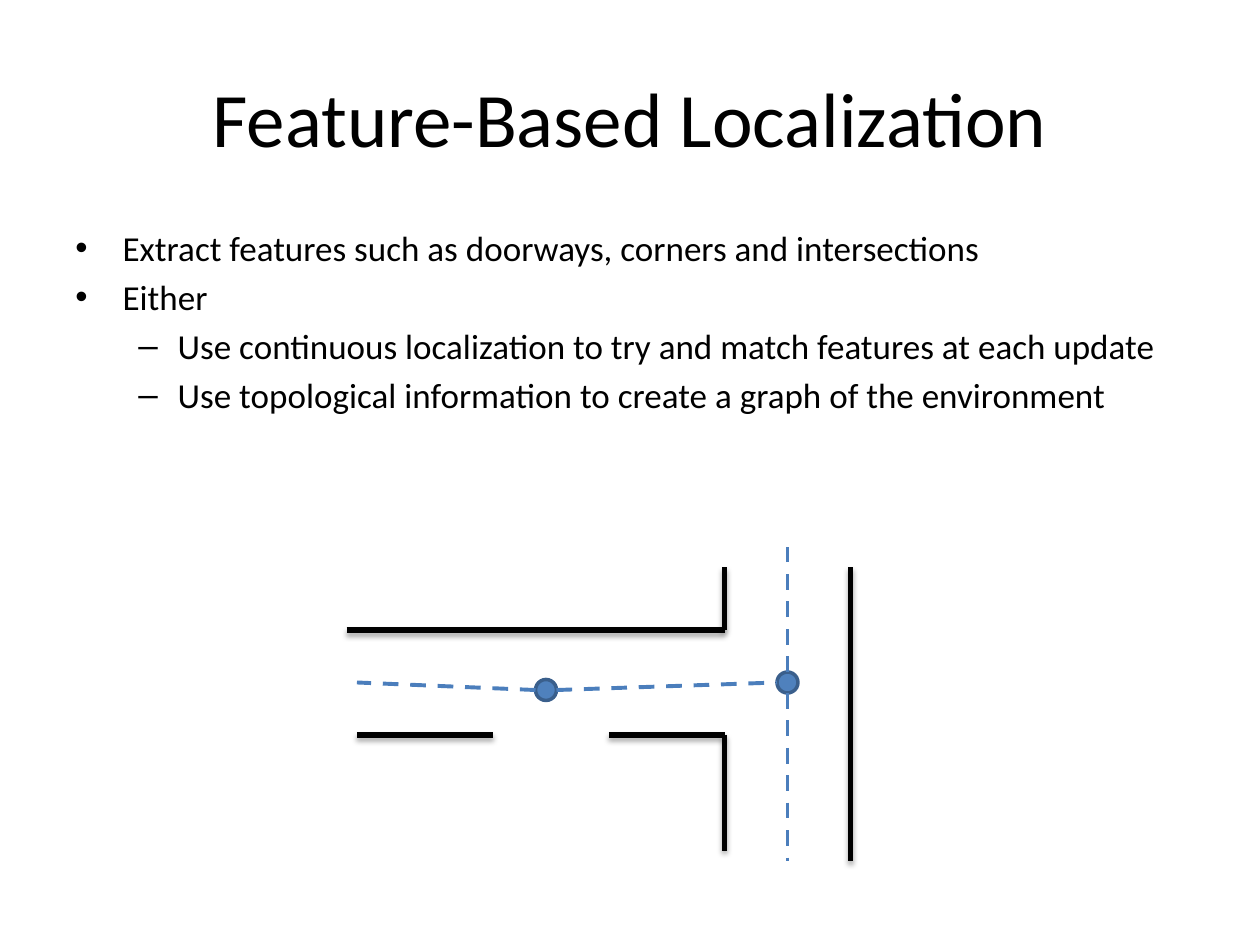
from dataclasses import dataclass

from lxml.etree import SubElement
from pptx import Presentation
from pptx.dml.color import RGBColor
from pptx.enum.dml import MSO_LINE
from pptx.enum.shapes import MSO_CONNECTOR, MSO_SHAPE
from pptx.enum.text import MSO_ANCHOR, PP_ALIGN
from pptx.oxml.ns import qn
from pptx.util import Pt


@dataclass(frozen=True)
class Theme:
    font: str = "Calibri"
    title_size: float = 44
    body_size: float = 20
    ink: RGBColor = RGBColor(0x00, 0x00, 0x00)
    node_fill: RGBColor = RGBColor(0x4F, 0x81, 0xBD)
    node_edge: RGBColor = RGBColor(0x3A, 0x5F, 0x8C)
    route: RGBColor = RGBColor(0x4B, 0x7E, 0xBC)


THEME = Theme()

# Bullet sign, left indent and hanging indent for each level
LEVELS = [("•", 27, -27), ("–", 58.5, -22.5)]

POINTS = [
    (0, "Extract features such as doorways, corners and intersections"),
    (0, "Either"),
    (1, "Use continuous localization to try and match features at each update"),
    (1, "Use topological information to create a graph of the environment"),
]

# Corridor edges, in points
UPPER, LOWER = 360, 420
INNER, OUTER = 414, 486
WALLS = [
    (198, UPPER, INNER, UPPER),
    (204, LOWER, 282, LOWER),
    (348, LOWER, INNER, LOWER),
    (OUTER, 324, OUTER, 492),
    (INNER, UPPER, INNER, 324),
    (INNER, LOWER, INNER, 486),
]

# Graph nodes: the doorway and the intersection
RADIUS = 6
DOOR = (312, 394.3)
CROSSING = ((INNER + OUTER) / 2, 390)


def add_text_box(page, left, top, width, height, text, size):
    box = page.shapes.add_textbox(Pt(left), Pt(top), Pt(width), Pt(height))
    frame = box.text_frame
    frame.word_wrap = True
    frame.text = text
    for para in frame.paragraphs:
        for span in para.runs:
            span.font.name = THEME.font
            span.font.size = Pt(size)
            span.font.color.rgb = THEME.ink
    return frame


def add_title(page, text):
    frame = add_text_box(page, 36, 21.6, 648, 90, text, THEME.title_size)
    frame.vertical_anchor = MSO_ANCHOR.MIDDLE
    frame.paragraphs[0].alignment = PP_ALIGN.CENTER


def add_bullets(page, points):
    text = "\n".join(words for _, words in points)
    frame = add_text_box(page, 36, 126, 648, 356.4, text, THEME.body_size)
    for para, (level, _) in zip(frame.paragraphs, points):
        sign, indent, hanging = LEVELS[level]
        para.level = level
        para.space_before = Pt(THEME.body_size * 0.2)
        properties = para._p.get_or_add_pPr()
        properties.set("marL", str(Pt(indent)))
        properties.set("indent", str(Pt(hanging)))
        SubElement(properties, qn("a:buFont"), typeface="Arial")
        SubElement(properties, qn("a:buChar"), char=sign)


def add_line(page, ends, color, width):
    """Draw a straight line; return it with its empty effect list."""
    line = page.shapes.add_connector(MSO_CONNECTOR.STRAIGHT, *map(Pt, ends))
    line.line.color.rgb = color
    line.line.width = Pt(width)
    effects = SubElement(line._element.spPr, qn("a:effectLst"))
    return line, effects


def add_wall(page, ends):
    _, effects = add_line(page, ends, THEME.ink, 3)
    shadow = SubElement(effects, qn("a:outerShdw"), blurRad=str(Pt(3.1)),
                        dist=str(Pt(1.8)), dir="5400000", rotWithShape="0")
    color = SubElement(shadow, qn("a:srgbClr"), val=str(THEME.ink))
    SubElement(color, qn("a:alpha"), val="35000")


def add_route(page, ends):
    line, _ = add_line(page, ends, THEME.route, 2.25)
    line.line.dash_style = MSO_LINE.DASH


def add_node(page, center):
    x, y = center
    node = page.shapes.add_shape(MSO_SHAPE.OVAL, Pt(x - RADIUS), Pt(y - RADIUS),
                                 Pt(2 * RADIUS), Pt(2 * RADIUS))
    node.shadow.inherit = False
    node.fill.solid()
    node.fill.fore_color.rgb = THEME.node_fill
    node.line.color.rgb = THEME.node_edge
    node.line.width = Pt(2)


def main():
    deck = Presentation()
    deck.slide_width, deck.slide_height = Pt(720), Pt(540)
    page = deck.slides.add_slide(deck.slide_layouts[6])

    # Text
    add_title(page, "Feature-Based Localization")
    add_bullets(page, POINTS)

    # Corridor walls
    for wall in WALLS:
        add_wall(page, wall)

    # Nodes and the routes that meet their edges
    for center in (CROSSING, DOOR):
        add_node(page, center)
    door_x, door_y = DOOR
    cross_x, cross_y = CROSSING
    routes = [
        (door_x + RADIUS, door_y, cross_x - RADIUS, cross_y),
        (cross_x, cross_y - RADIUS, cross_x, 312),
        (cross_x, cross_y + RADIUS, cross_x, 492),
        (door_x - RADIUS, door_y, 204, cross_y),
    ]
    for route in routes:
        add_route(page, route)

    deck.save("out.pptx")


if __name__ == "__main__":
    main()
